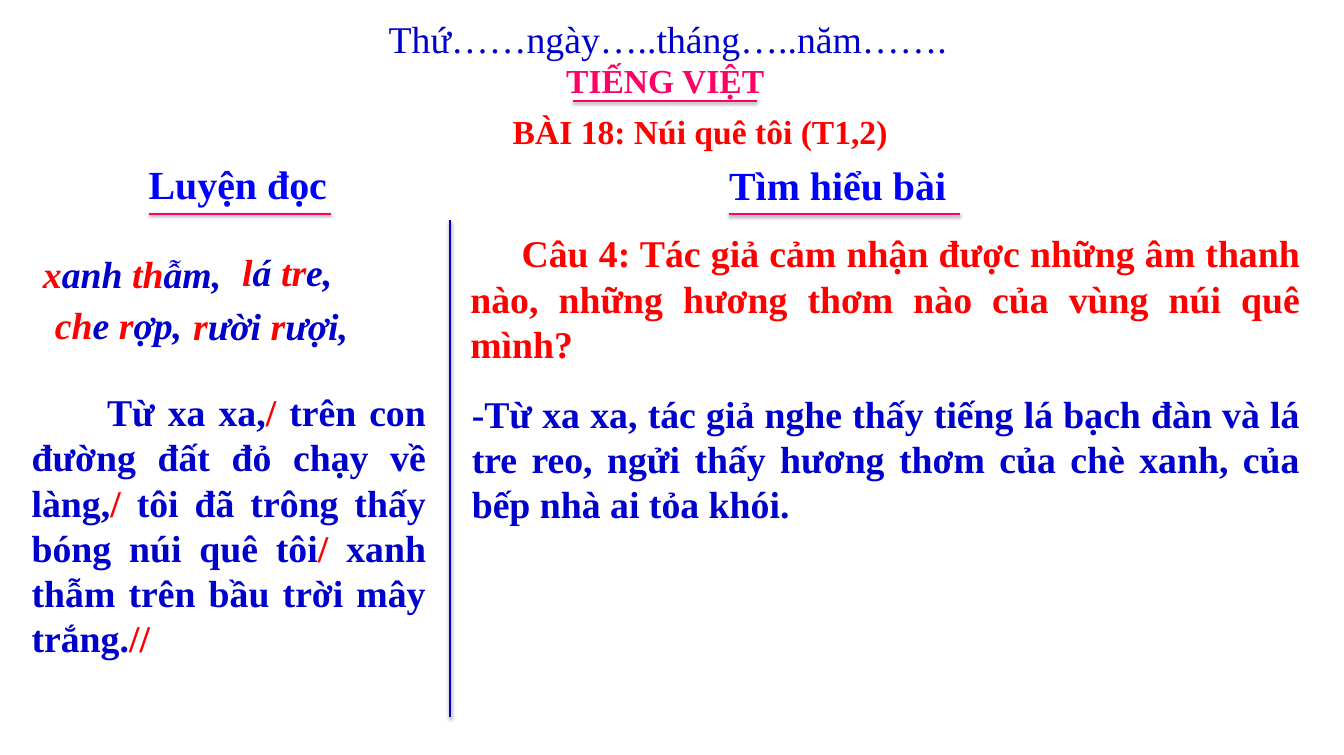
from dataclasses import dataclass
from itertools import cycle
from lxml.etree import SubElement
from pptx import Presentation
from pptx.dml.color import RGBColor
from pptx.enum.shapes import MSO_CONNECTOR
from pptx.enum.text import MSO_AUTO_SIZE, PP_ALIGN
from pptx.oxml.ns import qn
from pptx.util import Inches, Pt

FONT = "Times New Roman"
RED, NAVY, BLUE, PINK = "FF0000", "0000CC", "0000FF", "FF0066"
CELL = 0.1
COLS, ROWS = 178, 100
LEFT, CENTER, FULL = PP_ALIGN.LEFT, PP_ALIGN.CENTER, PP_ALIGN.JUSTIFY


@dataclass
class Block:
    col: float
    row: float
    wide: float
    high: float
    runs: tuple[str, ...]
    hues: tuple[str, ...]
    size: int = 36
    align: PP_ALIGN = FULL
    bold: bool = True
    slant: bool = False
    wrap: bool = True
    inset: tuple[float, float] = (1, 0.5)
    indent: float = 0


@dataclass
class Rule:
    col: float
    row: float
    wide: float
    high: float
    hue: str


def grid(count: float) -> int:
    return Inches(count * CELL)


def tint(code: str) -> RGBColor:
    return RGBColor.from_string(code)


def words(col: float, row: float, wide: float, *runs: str) -> Block:
    return Block(col, row, wide, 7.1, runs, (RED, NAVY), slant=True)


def head(col: float, row: float, wide: float, text: str) -> Block:
    return Block(col, row, wide, 7.2, (text,), (BLUE,), 38, CENTER,
                 wrap=False, inset=(0.8, 0.4))


def write(slide, block: Block) -> None:
    box = slide.shapes.add_textbox(grid(block.col), grid(block.row),
                                   grid(block.wide), grid(block.high))
    frame = box.text_frame
    frame.word_wrap = block.wrap
    frame.auto_size = MSO_AUTO_SIZE.SHAPE_TO_FIT_TEXT
    side, edge = map(grid, block.inset)
    frame.margin_left = frame.margin_right = side
    frame.margin_top = frame.margin_bottom = edge
    para = frame.paragraphs[0]
    para.alignment = block.align
    if block.indent:
        para._p.get_or_add_pPr().set("indent", str(grid(block.indent)))
    for text, hue in zip(block.runs, cycle(block.hues)):
        run = para.add_run()
        run.text = text
        font = run.font
        font.name, font.size = FONT, Pt(block.size)
        font.bold, font.italic = block.bold, block.slant
        font.color.rgb = tint(hue)


def draw(slide, rule: Rule) -> None:
    line = slide.shapes.add_connector(
        MSO_CONNECTOR.STRAIGHT, grid(rule.col), grid(rule.row),
        grid(rule.col + rule.wide), grid(rule.row + rule.high))
    line.line.color.rgb = tint(rule.hue)
    line.line.width = Pt(2)
    glow = SubElement(line._element.spPr, qn("a:effectLst"))
    shade = SubElement(glow, qn("a:outerShdw"), blurRad=str(Pt(3.1)),
                       dist=str(Pt(1.6)), dir="5400000", rotWithShape="0")
    black = SubElement(shade, qn("a:srgbClr"), val="000000")
    SubElement(black, qn("a:alpha"), val="38000")


BLOCKS = [
    Block(50.5, 1.6, 76.7, 7.1, ("Thứ……ngày…..tháng…..năm…….",), (NAVY,),
          align=LEFT, bold=False, wrap=False),
    Block(74, 7.5, 28.5, 6.4, ("TIẾNG VIỆT",), (PINK,), 32, LEFT, wrap=False),
    Block(64, 13.9, 57.5, 7, ("BÀI 18: Núi quê tôi (T1,2)",), (RED,), 32,
          CENTER, inset=(1.6, 0.8)),
    head(18.8, 20.7, 25.4, "Luyện đọc"),
    head(95.7, 20.9, 30.5, "Tìm hiểu bài"),
    words(4.7, 32.7, 30, "x", "anh ", "th", "ẫm,"),
    words(31.1, 32.5, 17.9, "l", "á ", "tr", "e,"),
    words(6.3, 39.5, 24.7, "ch", "e ", "r", "ợp,"),
    words(24.6, 39.6, 25.9, "r", "ười ", "r", "ượi,"),
    Block(3.2, 51, 54.2, 37.4,
          ("Từ xa xa,", "/ ", "trên con đường đất đỏ chạy về làng,", "/ ",
           "tôi đã trông thấy bóng núi quê tôi", "/ ",
           "xanh thẫm trên bầu trời mây trắng.", "//"),
          (NAVY, RED), indent=10),
    Block(61.3, 30, 111.9, 19.2,
          ("Câu 4: Tác giả cảm nhận được những âm thanh nào, "
           "những hương thơm nào của vùng núi quê mình?",),
          (RED,), indent=6.8),
    Block(61.5, 51.2, 111.7, 19.2,
          ("-Từ xa xa, tác giả nghe thấy tiếng lá bạch đàn và lá tre reo, "
           "ngửi thấy hương thơm của chè xanh, của bếp nhà ai tỏa khói.",),
          (NAVY,)),
]
RULES = [
    Rule(75.9, 13.4, 24.4, 0, PINK),
    Rule(19.7, 28.3, 24.1, 0, PINK),
    Rule(96.5, 28.4, 30.7, 0, PINK),
    Rule(59.6, 29.2, 0, 65.8, NAVY),
]


def main() -> None:
    deck = Presentation()
    deck.slide_width, deck.slide_height = grid(COLS), grid(ROWS)
    slide = deck.slides.add_slide(deck.slide_layouts[6])
    for block in BLOCKS:
        write(slide, block)
    for rule in RULES:
        draw(slide, rule)
    deck.save("out.pptx")


if __name__ == "__main__":
    main()
